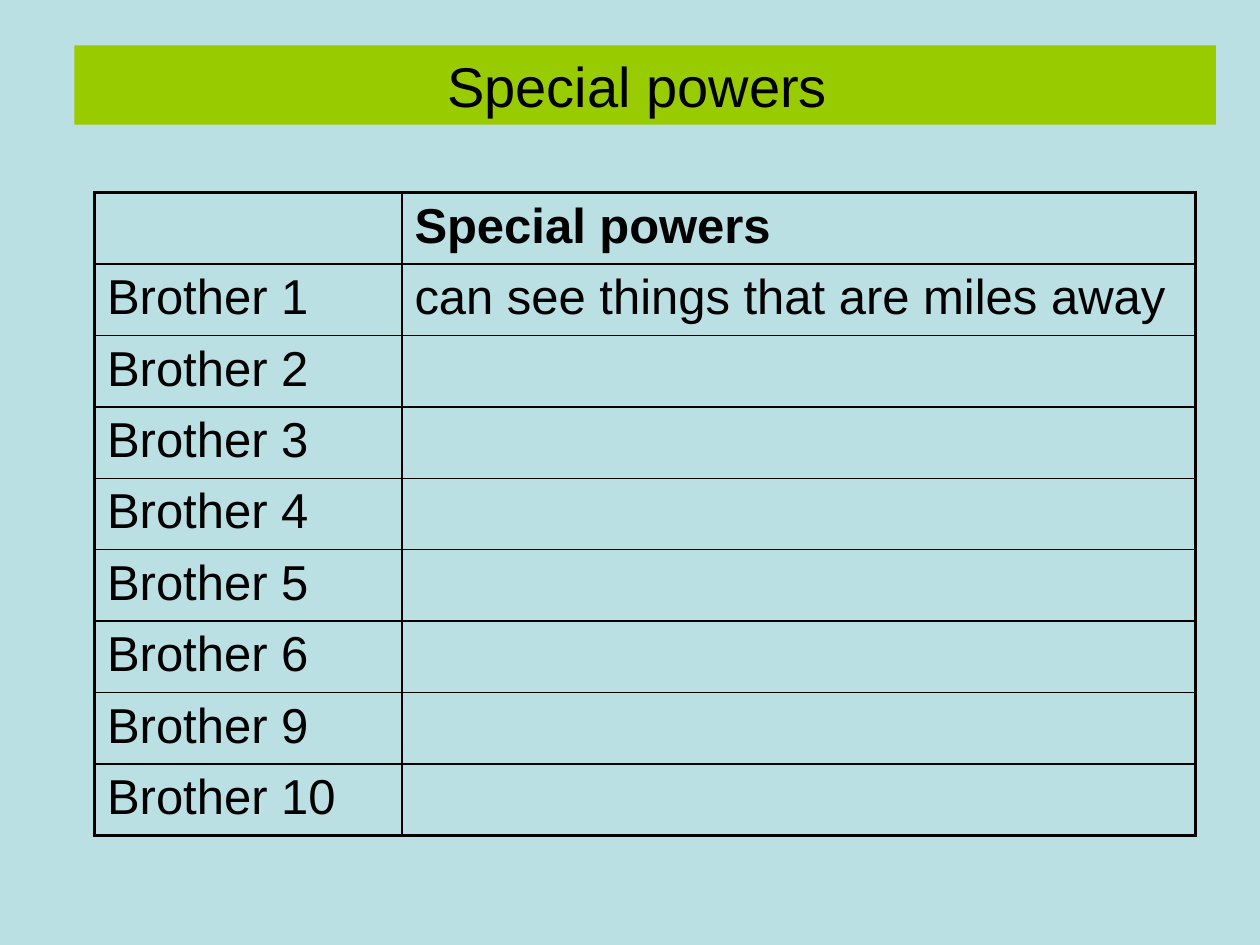
from lxml.etree import SubElement
from pptx import Presentation
from pptx.dml.color import RGBColor
from pptx.enum.shapes import MSO_SHAPE as Shape
from pptx.enum.text import MSO_ANCHOR as Anchor, PP_ALIGN as Align
from pptx.oxml import parse_xml
from pptx.oxml.ns import nsdecls, qn
from pptx.util import Inches, Pt

BACKGROUND = RGBColor(0xBB, 0xE0, 0xE3)
BANNER = RGBColor(0x99, 0xCC, 0x00)
BLACK = RGBColor(0, 0, 0)
FONT = "Arial"
THIN, THICK = 1, 2.25
COLUMN_WIDTHS = (2.44, 6.3)
BROTHERS = (1, 2, 3, 4, 5, 6, 9, 10)
POWERS = {1: "can see things that are miles away"}


def style(p, size, bold=False):
    p.font.name = FONT
    p.font.size = Pt(size)
    p.font.bold = bold
    p.font.color.rgb = BLACK


def add_banner(slide, text):
    sp = slide.shapes.add_shape(Shape.RECTANGLE, Inches(0.59), Inches(0.36), Inches(9.06), Inches(0.63))
    sp.shadow.inherit = False
    sp.fill.solid()
    sp.fill.fore_color.rgb = BANNER
    sp.line.fill.background()
    tf = sp.text_frame
    tf.word_wrap = True
    tf.vertical_anchor = Anchor.TOP
    p = tf.paragraphs[0]
    p.text = text
    p.alignment = Align.CENTER
    style(p, 32)


def set_borders(cell, widths):
    tcPr = cell._tc.get_or_add_tcPr()
    for side, width in widths.items():
        ln = SubElement(tcPr, qn(f"a:ln{side}"), w=str(Pt(width)))
        fill = SubElement(ln, qn("a:solidFill"))
        SubElement(fill, qn("a:srgbClr"), val=str(BLACK))


def fill_cell(cell, text, bold):
    cell.fill.background()
    p = cell.text_frame.paragraphs[0]
    if text:
        p.text = text
    style(p, 28, bold)
    spacing = f'<a:spcBef {nsdecls("a")}><a:spcPct val="20000"/></a:spcBef>'
    p._p.get_or_add_pPr().insert(0, parse_xml(spacing))


def add_grid(slide, rows):
    last_row, last_col = len(rows) - 1, len(COLUMN_WIDTHS) - 1
    table = slide.shapes.add_table(len(rows), len(COLUMN_WIDTHS), Inches(0.75), Inches(1.53),
                                   Inches(sum(COLUMN_WIDTHS)), Inches(5.1)).table
    table.first_row = table.horz_banding = False
    for column, width in zip(table.columns, COLUMN_WIDTHS):
        column.width = Inches(width)
    for r, row in enumerate(rows):
        for c, text in enumerate(row):
            cell = table.cell(r, c)
            outer = {"L": c == 0, "R": c == last_col, "T": r == 0, "B": r == last_row}
            set_borders(cell, {side: THICK if edge else THIN for side, edge in outer.items()})
            fill_cell(cell, text, bold=r == 0)


def main():
    """Build the slide with the table of the brothers' special powers."""
    prs = Presentation()
    prs.slide_width, prs.slide_height = Inches(10), Inches(7.5)
    slide = prs.slides.add_slide(prs.slide_layouts[6])
    slide.background.fill.solid()
    slide.background.fill.fore_color.rgb = BACKGROUND
    add_banner(slide, "Special powers ")
    add_grid(slide, [("", "Special powers")] + [(f"Brother {n}", POWERS.get(n, "")) for n in BROTHERS])
    prs.save("out.pptx")


if __name__ == "__main__":
    main()
